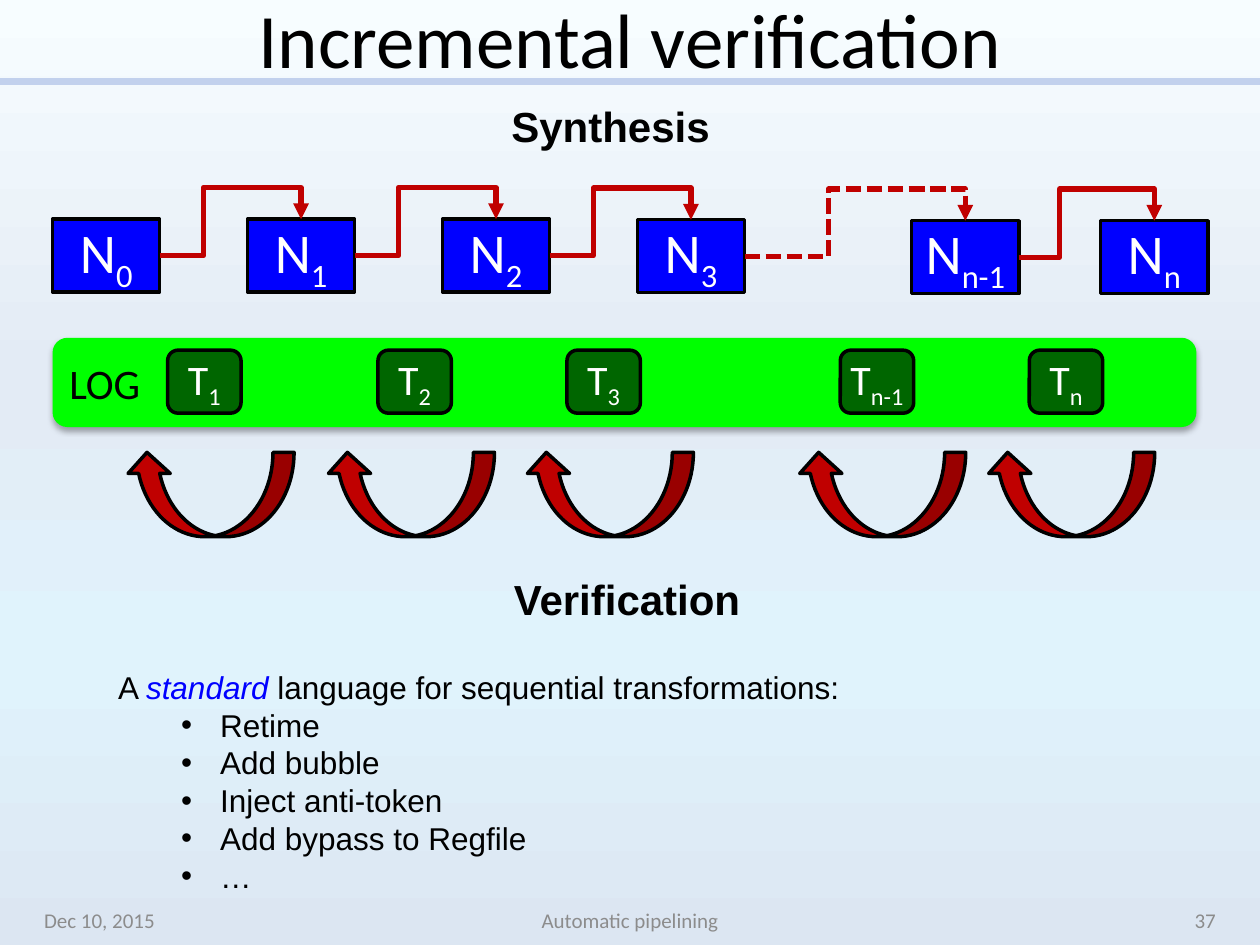
"""Build the slide on incremental verification of a pipelining flow."""
from lxml import etree
from pptx import Presentation
from pptx.dml.color import RGBColor
from pptx.enum.dml import MSO_LINE
from pptx.enum.shapes import MSO_CONNECTOR, MSO_SHAPE
from pptx.enum.text import MSO_ANCHOR, MSO_AUTO_SIZE, PP_ALIGN
from pptx.oxml.ns import qn
from pptx.util import Cm, Pt

LEFT, CENTER, RIGHT = PP_ALIGN.LEFT, PP_ALIGN.CENTER, PP_ALIGN.RIGHT
TOP, MIDDLE = MSO_ANCHOR.TOP, MSO_ANCHOR.MIDDLE
RECT, ROUND = MSO_SHAPE.RECTANGLE, MSO_SHAPE.ROUNDED_RECTANGLE
CURVED = MSO_SHAPE.CURVED_UP_ARROW
ELBOW, STRAIGHT = MSO_CONNECTOR.ELBOW, MSO_CONNECTOR.STRAIGHT
DOTTED = MSO_LINE.SQUARE_DOT

COLORS = {
    "black": "000000", "white": "FFFFFF", "blue": "0000FF", "red": "C00000",
    "log": "00FF00", "step": "006600", "rule": "C2D1ED", "footer": "8C8C8C",
}
BACKGROUND = [(0, "F7FDFF"), (40, "E3EBF5"), (70, "E0F3FC"), (100, "DCE6F2")]

TITLE = "Incremental verification"
# subscript, left, top
NETLISTS = [("0", 1.06, 4.42), ("1", 4.99, 4.42), ("2", 8.92, 4.42),
            ("3", 12.85, 4.43), ("n-1", 18.38, 4.45), ("n", 22.19, 4.45)]
# elbow position, dash
LINKS = [(0.31, None), (0.31, None), (0.31, None), (0.38, DOTTED), (0.3, None)]
STEPS = [("1", 3.38), ("2", 7.62), ("3", 11.43), ("n-1", 16.94), ("n", 20.75)]
CHECKS = [2.54, 6.58, 10.59, 16.08, 19.89]
HEADINGS = [("Synthesis", (10.06, 1.9, 4.55, 1.27)),
            ("Verification", (10.11, 11.43, 5.13, 1.27))]
FOOTERS = [("Dec 10, 2015", 0.64, 5.92, LEFT),
           ("Automatic pipelining", 8.68, 8.04, CENTER),
           ("37", 18.84, 5.92, RIGHT)]
INTRO = [("A ", {}), ("standard", {"color": "blue", "italic": True}),
         (" language for sequential transformations:", {})]
TRANSFORMS = ["Retime", "Add bubble", "Inject anti-token",
              "Add bypass to Regfile", "…"]

NET_W, NET_H, RISE = 2.16, 1.47, 0.64


def add_xml(parent, tag, **attrs):
    return etree.SubElement(parent, qn(tag), {k: str(v) for k, v in attrs.items()})


def rgb(name):
    return RGBColor.from_string(COLORS[name])


def add_run(p, text, size, font="Calibri", color="black", sub=False, **formats):
    r = p.add_run()
    r.text = text
    formats.update(size=Pt(size), name=font)
    for key, value in formats.items():
        setattr(r.font, key, value)
    r.font.color.rgb = rgb(color)
    if sub:
        r.font._element.set("baseline", "-25000")


def set_frame(tf, align=LEFT, **formats):
    for key, value in formats.items():
        setattr(tf, key, value)
    p = tf.paragraphs[0]
    p.alignment = align
    return p


def add_box(shapes, kind, box, fill, line="black"):
    sp = shapes.add_shape(kind, *map(Cm, box))
    sp.shadow.inherit = False
    sp.fill.solid()
    sp.fill.fore_color.rgb = rgb(fill)
    if line:
        sp.line.color.rgb = rgb(line)
        sp.line.width = Pt(2)
    else:
        sp.line.fill.background()
    return sp


def add_symbol(shapes, kind, box, fill, letter, sub, size):
    sp = add_box(shapes, kind, box, fill)
    p = set_frame(sp.text_frame, CENTER, vertical_anchor=MIDDLE)
    if len(sub) > 1:
        sp.text_frame.margin_left = sp.text_frame.margin_right = 0
    add_run(p, letter, size, color="white")
    add_run(p, sub, size, color="white", sub=True)


def add_text(shapes, box, align=LEFT, **formats):
    sp = shapes.add_textbox(*map(Cm, box))
    return sp.text_frame, set_frame(sp.text_frame, align, **formats)


def add_line(shapes, kind, ends, color, width):
    cx = shapes.add_connector(kind, *map(Cm, ends))
    add_xml(cx._element.spPr, "a:effectLst")
    cx.line.color.rgb = rgb(color)
    cx.line.width = Pt(width)
    return cx


def add_link(shapes, source, target, bend, dash):
    x1, y1 = source[1] + NET_W, source[2] + NET_H / 2
    x2, y2 = target[1] + NET_W / 2, target[2]
    cx = add_line(shapes, ELBOW, (x1, y1, x2, y2), "red", 3)
    if dash:
        cx.line.dash_style = dash
    geom = cx._element.spPr.find(qn("a:prstGeom"))
    geom.set("prst", "bentConnector4")
    guides = geom.find(qn("a:avLst"))
    for i, part in enumerate((bend, 1 + RISE / (y1 - y2)), 1):
        add_xml(guides, "a:gd", name=f"adj{i}", fmla=f"val {round(part * 100000)}")
    add_xml(cx.line._get_or_add_ln(), "a:tailEnd", type="triangle")


def set_background(slide):
    fill = slide.background.fill
    fill.gradient()
    fill.gradient_angle = 270
    stops = slide._element.xpath(".//a:gsLst")[0]
    for stop in list(stops):
        stops.remove(stop)
    for pos, color in BACKGROUND:
        stop = add_xml(stops, "a:gs", pos=pos * 1000)
        add_xml(stop, "a:srgbClr", val=color)


def add_log(shapes):
    sp = add_box(shapes, ROUND, (1.06, 6.81, 23.06, 1.8), "log", None)
    add_run(set_frame(sp.text_frame, vertical_anchor=MIDDLE), "LOG", 24)
    effects = sp._element.spPr.find(qn("a:effectLst"))
    shadow = add_xml(effects, "a:outerShdw", blurRad=Pt(3.5), dist=Pt(2.2),
                     dir=5400000, rotWithShape=0)
    color = add_xml(shadow, "a:srgbClr", val=COLORS["black"])
    add_xml(color, "a:alpha", val=32000)


def add_language(shapes):
    tf, p = add_text(shapes, (2.13, 13.34, 15.19, 4.88), word_wrap=False,
                     auto_size=MSO_AUTO_SIZE.SHAPE_TO_FIT_TEXT)
    for text, formats in INTRO:
        add_run(p, text, 18, "Arial", **formats)
    for text in TRANSFORMS:
        p = tf.add_paragraph()
        p.level = 1
        add_run(p, text, 18, "Arial")
        props = p._p.get_or_add_pPr()
        props.set("marL", str(Cm(2.06)))
        props.set("indent", str(Cm(-0.79)))
        add_xml(props, "a:buFont", typeface="Arial")
        add_xml(props, "a:buChar", char="•")


def main():
    prs = Presentation()
    prs.slide_width, prs.slide_height = Cm(25.4), Cm(19.05)
    slide = prs.slides.add_slide(prs.slide_layouts[5])
    shapes = slide.shapes
    set_background(slide)
    add_line(shapes, STRAIGHT, (0, 1.65, 25.4, 1.65), "rule", 4)
    title = shapes.title
    title.left, title.top, title.width, title.height = map(Cm, (1.27, -0.2, 22.86, 1.9))
    add_run(set_frame(title.text_frame, CENTER, vertical_anchor=MIDDLE,
                      auto_size=MSO_AUTO_SIZE.NONE), TITLE, 44)
    add_log(shapes)
    for text, x, w, align in FOOTERS:
        _, p = add_text(shapes, (x, 18.03, w, 1.02), align,
                        vertical_anchor=MIDDLE, word_wrap=True)
        add_run(p, text, 12, color="footer")
    for sub, x, y in NETLISTS:
        add_symbol(shapes, RECT, (x, y, NET_W, NET_H), "blue", "N", sub, 32)
    for source, target, (bend, dash) in zip(NETLISTS, NETLISTS[1:], LINKS):
        add_link(shapes, source, target, bend, dash)
    steps = shapes.add_group_shape().shapes
    for sub, x in STEPS:
        add_symbol(steps, ROUND, (x, 7.06, 1.48, 1.27), "step", "T", sub, 24)
    checks = shapes.add_group_shape().shapes
    for x in CHECKS:
        sp = add_box(checks, CURVED, (x, 9.12, 3.39, 1.7), "red")
        sp._element.spPr.xfrm.set("flipH", "1")
    for text, box in HEADINGS:
        _, p = add_text(shapes, box, word_wrap=False,
                        auto_size=MSO_AUTO_SIZE.SHAPE_TO_FIT_TEXT)
        add_run(p, text, 24, "Arial", bold=True)
    add_language(shapes)
    prs.save("out.pptx")


if __name__ == "__main__":
    main()
